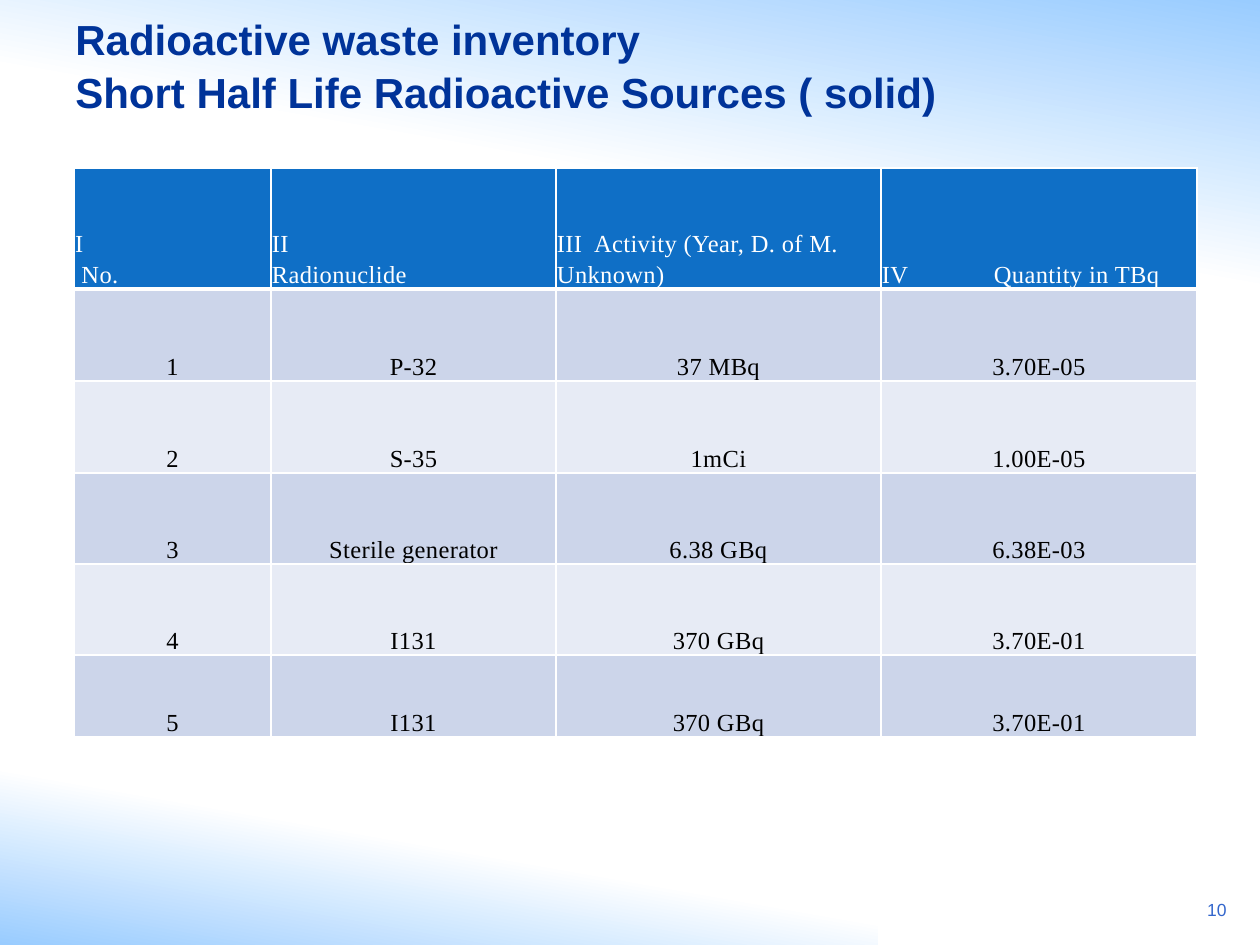
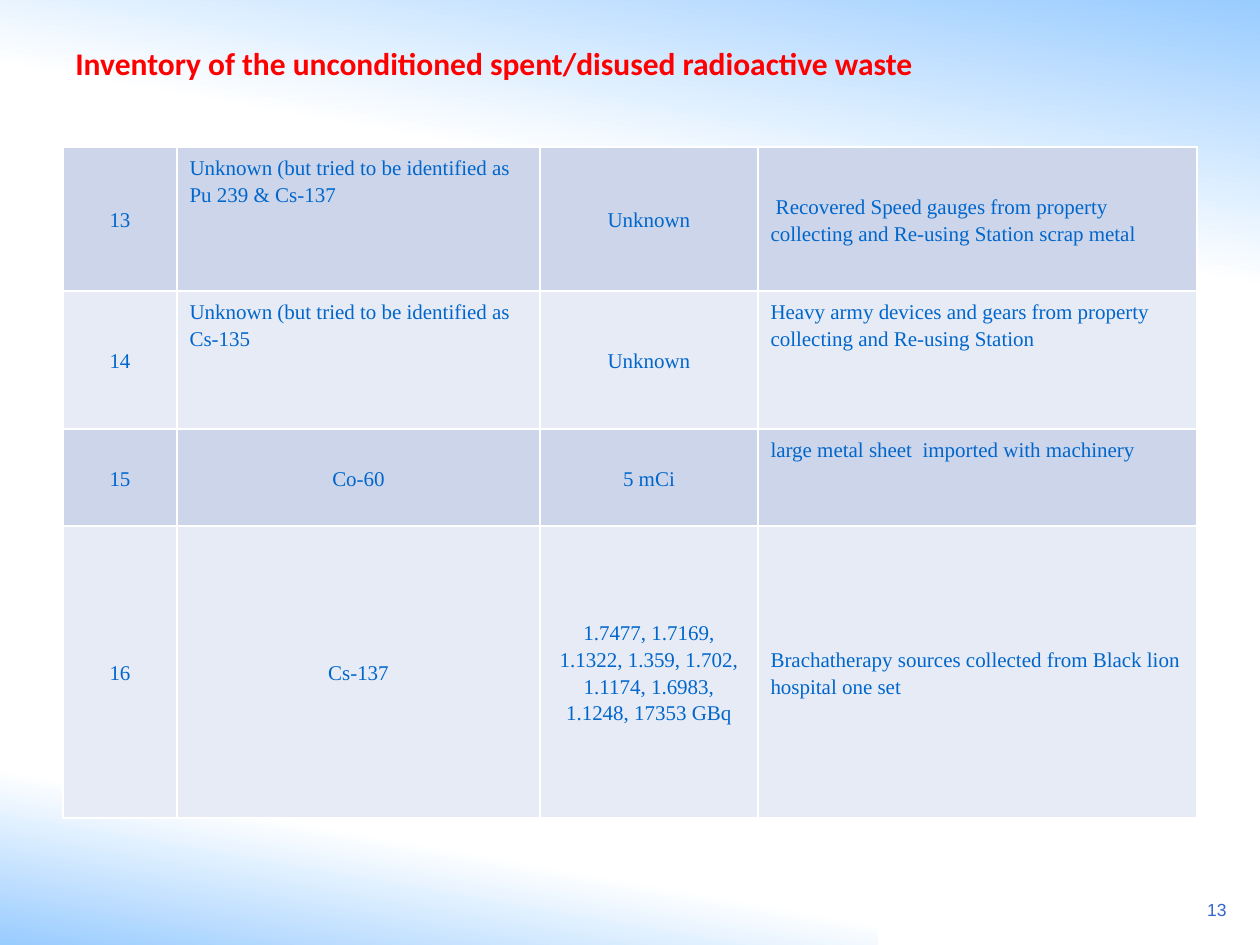
from lxml.etree import SubElement
from pptx import Presentation
from pptx.dml.color import RGBColor
from pptx.enum.shapes import MSO_SHAPE
from pptx.enum.text import MSO_ANCHOR, PP_ALIGN
from pptx.oxml.ns import qn
from pptx.util import Emu, Pt

SKY = RGBColor(0x99, 0xCC, 0xFF)
WHITE = RGBColor(0xFF, 0xFF, 0xFF)
BLACK = RGBColor(0, 0, 0)
NAVY = RGBColor(0x00, 0x33, 0x99)
RED = RGBColor(0xFF, 0, 0)
HEAD = RGBColor(0x0F, 0x6F, 0xC6)
DARK = RGBColor(0xCC, 0xD5, 0xEA)
PALE = RGBColor(0xE7, 0xEB, 0xF5)
BLUE = RGBColor(0x00, 0x66, 0xCC)
PAGE = RGBColor(0x33, 0x66, 0xCC)
SERIF = "Times New Roman"

# Cell formats: horizontal and vertical placement
PLACE = {
    "h": (PP_ALIGN.LEFT, MSO_ANCHOR.BOTTOM),
    "b": (PP_ALIGN.CENTER, MSO_ANCHOR.BOTTOM),
    "c": (PP_ALIGN.CENTER, MSO_ANCHOR.MIDDLE),
    "l": (PP_ALIGN.LEFT, MSO_ANCHOR.MIDDLE),
    "t": (PP_ALIGN.LEFT, MSO_ANCHOR.TOP),
}

# Gradient bands: box, angle, place of the white stop
BANDS = [
    ((0, 731, 878, 214), 80, 0.48),
    ((0, 0, 1260, 294), 260, 0.56),
]

SLIDES = [
    {
        "title": "Radioactive waste inventory\n"
                 "Short Half Life Radioactive Sources ( solid)",
        "style": {"font": "Arial", "size": 24, "color": NAVY, "bold": True},
        "box": (63, 31, 1134, 116), "foot": 57, "page": "10",
        "at": (74, 168), "header": True, "tight": True,
        "cols": [197, 285, 325, 316], "rows": [121, 92, 92, 91, 91, 82],
        "text": {"size": 14, "color": BLACK, "track": 20},
        "cells": [
            ("hhhh", "I\n No.", "II\nRadionuclide",
             "III  Activity (Year, D. of M. Unknown)", "IV\tQuantity in TBq"),
            ("bbbb", "1", "P-32", "37 MBq", "3.70E-05"),
            ("bbbb", "2", "S-35", "1mCi", "1.00E-05"),
            ("bbbb", "3", "Sterile generator", "6.38 GBq", "6.38E-03"),
            ("bbbb", "4", "I131", "370 GBq", "3.70E-01"),
            ("bbbb", "5", "I131", "370 GBq", "3.70E-01"),
        ],
    },
    {
        "title": "Inventory of the unconditioned spent/disused radioactive waste",
        "style": {"font": "Calibri", "size": 18, "color": RED, "bold": True},
        "box": (63, 31, 1134, 95), "foot": 40, "page": "13",
        "at": (63, 147), "header": False, "tight": False,
        "cols": [114, 363, 218, 439], "rows": [144, 138, 97, 292],
        "text": {"size": 12, "color": BLUE},
        "cells": [
            ("ctcl", "13", "Unknown (but tried to be identified as Pu 239 & Cs-137",
             "Unknown", " Recovered Speed gauges from property collecting "
             "and Re-using Station scrap metal"),
            ("ctct", "14", "Unknown (but tried to be identified as Cs-135",
             "Unknown", "Heavy army devices and gears from property collecting "
             "and Re-using Station"),
            ("ccct", "15", "Co-60", "5 mCi",
             "large metal sheet  imported with machinery"),
            ("cccl", "16", "Cs-137", "1.7477, 1.7169,\n1.1322, 1.359, 1.702, "
             "1.1174, 1.6983, 1.1248, 17353 GBq",
             "Brachatherapy sources collected from Black lion hospital one set"),
        ],
    },
]


def px(n):
    return Emu(round(n * 914400 / 126))


def write(frame, text, font="Arial", size=10, color=BLACK, bold=False,
          align=PP_ALIGN.LEFT, line=None, track=0):
    frame.word_wrap = True
    for i, part in enumerate(text.split("\n")):
        para = frame.add_paragraph() if i else frame.paragraphs[0]
        if "\t" in part:
            tabs = SubElement(para._p.get_or_add_pPr(), qn("a:tabLst"))
            SubElement(tabs, qn("a:tab"), pos=str(px(112)), algn="l")
        para.alignment = align
        if line:
            para.line_spacing = line
        run = para.add_run()
        run.text = part
        run.font.name = font
        run.font.size = Pt(size)
        run.font.bold = bold
        run.font.color.rgb = color
        if track:
            run.font._element.set("spc", str(track))


deck = Presentation()
deck.slide_width, deck.slide_height = px(1260), px(945)

for data in SLIDES:
    slide = deck.slides.add_slide(deck.slide_layouts[6])
    shapes = slide.shapes

    # Background bands
    for box, angle, stop in BANDS:
        band = shapes.add_shape(MSO_SHAPE.RECTANGLE, *map(px, box))
        band.shadow.inherit = False
        band.line.fill.background()
        band.fill.gradient()
        band.fill.gradient_angle = angle
        first, last = band.fill.gradient_stops
        first.color.rgb, first.position = SKY, 0
        last.color.rgb, last.position = WHITE, stop

    # Title
    frame = shapes.add_textbox(*map(px, data["box"])).text_frame
    frame.vertical_anchor = MSO_ANCHOR.MIDDLE
    frame.margin_bottom = px(data["foot"])
    write(frame, data["title"], line=1.06, **data["style"])

    # Table
    cols, rows = data["cols"], data["rows"]
    size = (sum(cols), sum(rows))
    table = shapes.add_table(len(rows), len(cols),
                             *map(px, data["at"] + size)).table
    table.first_row = data["header"]
    for col, width in zip(table.columns, cols):
        col.width = px(width)
    for r, (codes, *texts) in enumerate(data["cells"]):
        table.rows[r].height = px(rows[r])
        top = data["header"] and r == 0
        odd = (r + data["header"]) % 2
        look = {**data["text"], "font": SERIF, "line": 1.15}
        if top:
            look["color"] = WHITE
        for c, (code, text) in enumerate(zip(codes, texts)):
            cell = table.cell(r, c)
            align, cell.vertical_anchor = PLACE[code]
            if data["tight"]:
                cell.margin_left = cell.margin_right = cell.margin_top = px(1)
                cell.margin_bottom = 0
            write(cell.text_frame, text, align=align, **look)

            # Cell borders come before the fill
            props = cell._tc.get_or_add_tcPr()
            for side in ("lnL", "lnR", "lnT", "lnB"):
                thick = data["header"] and (r, side) in ((0, "lnB"), (1, "lnT"))
                edge = SubElement(props, qn("a:" + side),
                                  w=str(Pt(3 if thick else 1)))
                solid = SubElement(edge, qn("a:solidFill"))
                SubElement(solid, qn("a:srgbClr"), val=str(WHITE))
            cell.fill.solid()
            cell.fill.fore_color.rgb = HEAD if top else PALE if odd else DARK

    # Page number
    frame = shapes.add_textbox(*map(px, (1168, 893, 71, 40))).text_frame
    write(frame, data["page"], color=PAGE, align=PP_ALIGN.RIGHT)

deck.save("out.pptx")
